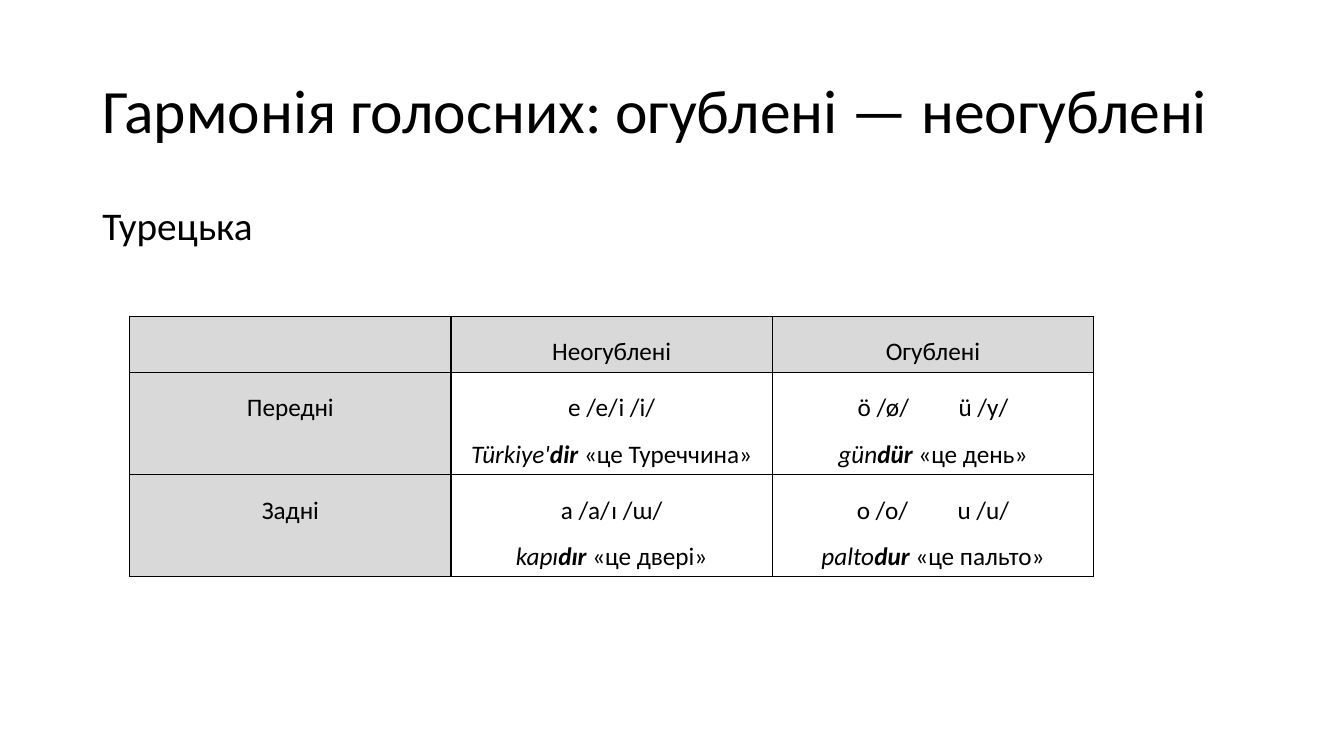
from dataclasses import dataclass

from lxml.etree import SubElement
from pptx import Presentation
from pptx.dml.color import RGBColor
from pptx.enum.text import MSO_ANCHOR, PP_ALIGN
from pptx.oxml.ns import qn
from pptx.util import Pt

COLORS = {"text": "000000", "border": "000000", "header": "D9D9D9"}
FONT = "Calibri"
COL_WIDTH = 229.5
ROW_HEIGHTS = (40, 73, 73)


@dataclass
class TextBlock:
    text: str
    top: float
    height: float
    size: float
    anchor: MSO_ANCHOR
    before: float = 0


@dataclass
class Example:
    vowels: str
    stem: str
    suffix: str
    meaning: str


BLOCKS = [
    TextBlock("Гармонія голосних: огублені — неогублені", 28.8, 104.4, 44, MSO_ANCHOR.MIDDLE),
    TextBlock("Турецька", 144, 342.7, 28, MSO_ANCHOR.TOP, before=10),
]
HEADERS = ["", "Неогублені", "Огублені"]
ROWS = {
    "Передні": [
        Example("e /e/\ti /i/", "Türkiye'", "dir", "це Туреччина"),
        Example("ö /ø/\tü /y/", "gün", "dür", "це день"),
    ],
    "Задні": [
        Example("a /a/\tı /ɯ/", "kapı", "dır", "це двері"),
        Example("o /o/\tu /u/", "palto", "dur", "це пальто"),
    ],
}


def add_run(p, text: str, *, size: float = 18, bold: bool = False, italic: bool = False) -> None:
    r = p.add_run()
    r.text = text
    r.font.name = FONT
    r.font.size = Pt(size)
    r.font.bold = bold
    r.font.italic = italic
    r.font.color.rgb = RGBColor.from_string(COLORS["text"])


def add_block(s, block: TextBlock) -> None:
    tf = s.shapes.add_textbox(Pt(66), Pt(block.top), Pt(828), Pt(block.height)).text_frame
    tf.word_wrap = True
    tf.vertical_anchor = block.anchor
    p = tf.paragraphs[0]
    p.line_spacing = 0.9
    p.space_before = Pt(block.before)
    add_run(p, block.text, size=block.size)


def style_cell(cell, shaded: bool) -> None:
    tcPr = cell._tc.get_or_add_tcPr()
    for side in ("lnL", "lnR", "lnT", "lnB"):
        ln = SubElement(tcPr, qn(f"a:{side}"), w=str(Pt(1)))
        fill = SubElement(ln, qn("a:solidFill"))
        SubElement(fill, qn("a:srgbClr"), val=COLORS["border"])
    if shaded:
        cell.fill.solid()
        cell.fill.fore_color.rgb = RGBColor.from_string(COLORS["header"])
    else:
        cell.fill.background()


def center(p):
    p.alignment = PP_ALIGN.CENTER
    p.line_spacing = 1.5
    return p


def fill_label(cell, text: str) -> None:
    style_cell(cell, shaded=True)
    if text:
        add_run(center(cell.text_frame.paragraphs[0]), text)


def fill_example(cell, example: Example) -> None:
    style_cell(cell, shaded=False)
    tf = cell.text_frame
    add_run(center(tf.paragraphs[0]), example.vowels)
    p = center(tf.add_paragraph())
    add_run(p, example.stem, italic=True)
    add_run(p, example.suffix, bold=True, italic=True)
    add_run(p, f" «{example.meaning}»")


def add_vowel_table(s) -> None:
    cols = len(HEADERS)
    table = s.shapes.add_table(len(ROW_HEIGHTS), cols, Pt(92.7), Pt(226.1),
                               Pt(COL_WIDTH * cols), Pt(sum(ROW_HEIGHTS))).table
    table.first_row = False
    table.horz_banding = False
    for col in table.columns:
        col.width = Pt(COL_WIDTH)
    for row, height in zip(table.rows, ROW_HEIGHTS):
        row.height = Pt(height)
    for c, header in enumerate(HEADERS):
        fill_label(table.cell(0, c), header)
    for r, (label, examples) in enumerate(ROWS.items(), start=1):
        fill_label(table.cell(r, 0), label)
        for c, example in enumerate(examples, start=1):
            fill_example(table.cell(r, c), example)


def main() -> None:
    prs = Presentation()
    prs.slide_width, prs.slide_height = Pt(960), Pt(540)
    s = prs.slides.add_slide(prs.slide_layouts[6])
    # Title and language name
    for block in BLOCKS:
        add_block(s, block)
    # Vowel harmony table
    add_vowel_table(s)
    prs.save("out.pptx")


if __name__ == "__main__":
    main()
